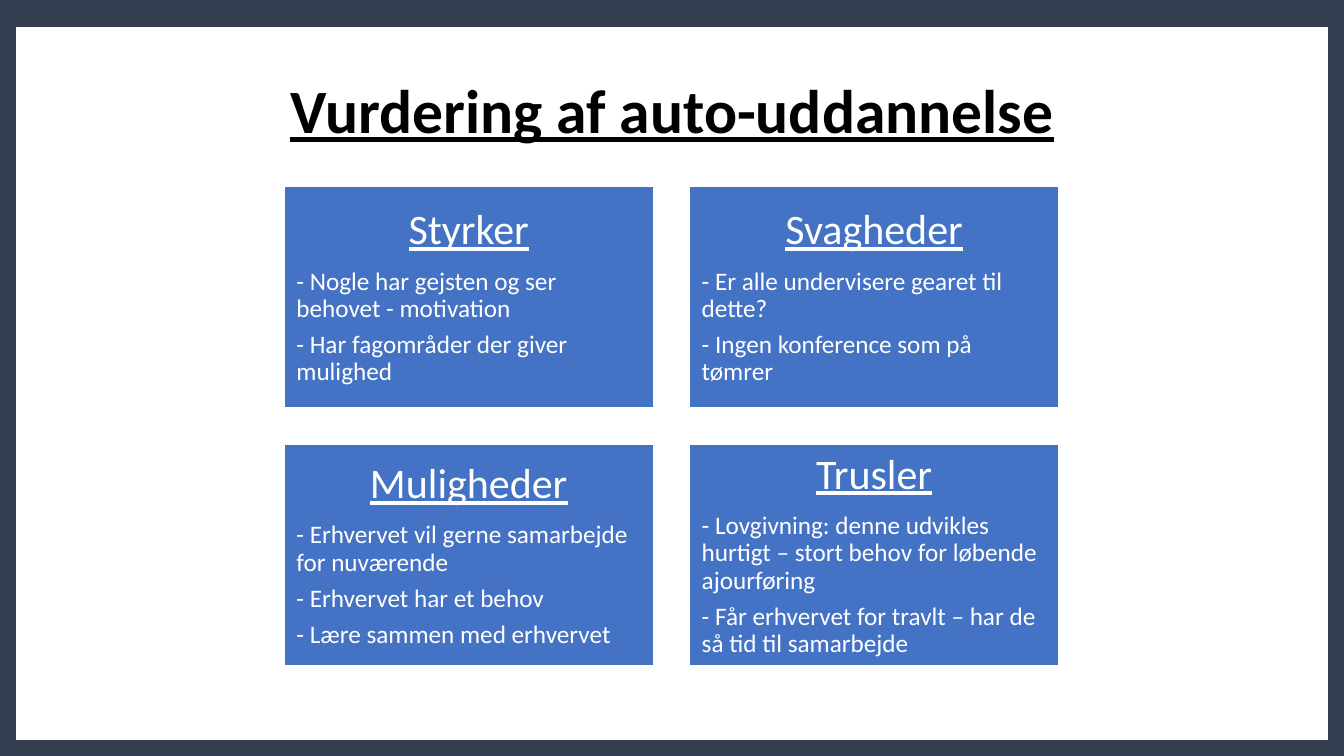
from dataclasses import dataclass
from pptx import Presentation
from pptx.dml.color import RGBColor
from pptx.enum.shapes import MSO_SHAPE
from pptx.enum.text import MSO_ANCHOR, PP_ALIGN
from pptx.util import Inches, Pt


@dataclass(frozen=True)
class Theme:
    font: str = "Calibri"
    frame: RGBColor = RGBColor(0x33, 0x3F, 0x50)
    card: RGBColor = RGBColor(0x44, 0x72, 0xC4)
    white: RGBColor = RGBColor(0xFF, 0xFF, 0xFF)
    black: RGBColor = RGBColor(0x00, 0x00, 0x00)
    title_size: float = 44
    heading_size: float = 30
    body_size: float = 18
    frame_width: float = 23.25
    card_line: float = 1
    line_spacing: float = 0.9
    space_ratio: float = 0.35


class SlideBuilder:
    def __init__(self, s, theme):
        self.s = s
        self.theme = theme

    def rect(self, x, y, w, h, line, width, fill=None):
        sp = self.s.shapes.add_shape(
            MSO_SHAPE.RECTANGLE, Inches(x), Inches(y), Inches(w), Inches(h))
        sp.shadow.inherit = False
        if fill is None:
            sp.fill.background()
        else:
            sp.fill.solid()
            sp.fill.fore_color.rgb = fill
        sp.line.color.rgb = line
        sp.line.width = Pt(width)
        return sp

    def paragraph(self, p, text, size, color, align, after=0, bold=False, underline=False):
        p.alignment = align
        p.line_spacing = self.theme.line_spacing
        p.space_after = Pt(after)
        r = p.add_run()
        r.text = text
        r.font.name = self.theme.font
        r.font.size = Pt(size)
        r.font.color.rgb = color
        r.font.bold = bold
        r.font.underline = underline

    def frame(self, x, y, w, h):
        self.rect(x, y, w, h, self.theme.frame, self.theme.frame_width)

    def title(self, x, y, w, h, text):
        tf = self.s.shapes.add_textbox(Inches(x), Inches(y), Inches(w), Inches(h)).text_frame
        tf.word_wrap = True
        tf.vertical_anchor = MSO_ANCHOR.MIDDLE
        self.paragraph(tf.paragraphs[0], text, self.theme.title_size, self.theme.black,
                       PP_ALIGN.CENTER, bold=True, underline=True)

    def card(self, x, y, w, h, heading, points):
        t = self.theme
        tf = self.rect(x, y, w, h, t.white, t.card_line, t.card).text_frame
        tf.word_wrap = True
        tf.vertical_anchor = MSO_ANCHOR.MIDDLE
        tf.margin_left = tf.margin_right = tf.margin_top = tf.margin_bottom = Inches(0.12)
        self.paragraph(tf.paragraphs[0], heading, t.heading_size, t.white, PP_ALIGN.CENTER,
                       t.heading_size * t.space_ratio, underline=True)
        for point in points:
            self.paragraph(tf.add_paragraph(), point, t.body_size, t.white, PP_ALIGN.LEFT,
                           t.body_size * t.space_ratio)


SWOT = [
    ("Styrker", ["- Nogle har gejsten og ser behovet - motivation",
                 "- Har fagområder der giver mulighed"]),
    ("Svagheder", ["- Er alle undervisere gearet til dette?",
                   "- Ingen konference som på tømrer"]),
    ("Muligheder", ["- Erhvervet vil gerne samarbejde for nuværende",
                    "- Erhvervet har et behov",
                    "- Lære sammen med erhvervet"]),
    ("Trusler", ["- Lovgivning: denne udvikles hurtigt – stort behov for løbende ajourføring",
                 "- Får erhvervet for travlt – har de så tid til samarbejde"]),
]
CARD_W, CARD_H, GAP = 3.66, 2.2, 0.36


def main():
    prs = Presentation()
    prs.slide_width = Inches(13.33)
    prs.slide_height = Inches(7.5)
    s = prs.slides.add_slide(prs.slide_layouts[6])
    b = SlideBuilder(s, Theme())
    b.frame(0, 0.11, 13.33, 7.39)
    b.title(0.92, 0.4, 11.5, 1.45, "Vurdering af auto-uddannelse")
    for i, (heading, points) in enumerate(SWOT):
        row, col = divmod(i, 2)
        b.card(2.82 + col * (CARD_W + GAP), 1.85 + row * (CARD_H + GAP),
               CARD_W, CARD_H, heading, points)
    prs.save("out.pptx")


if __name__ == "__main__":
    main()
